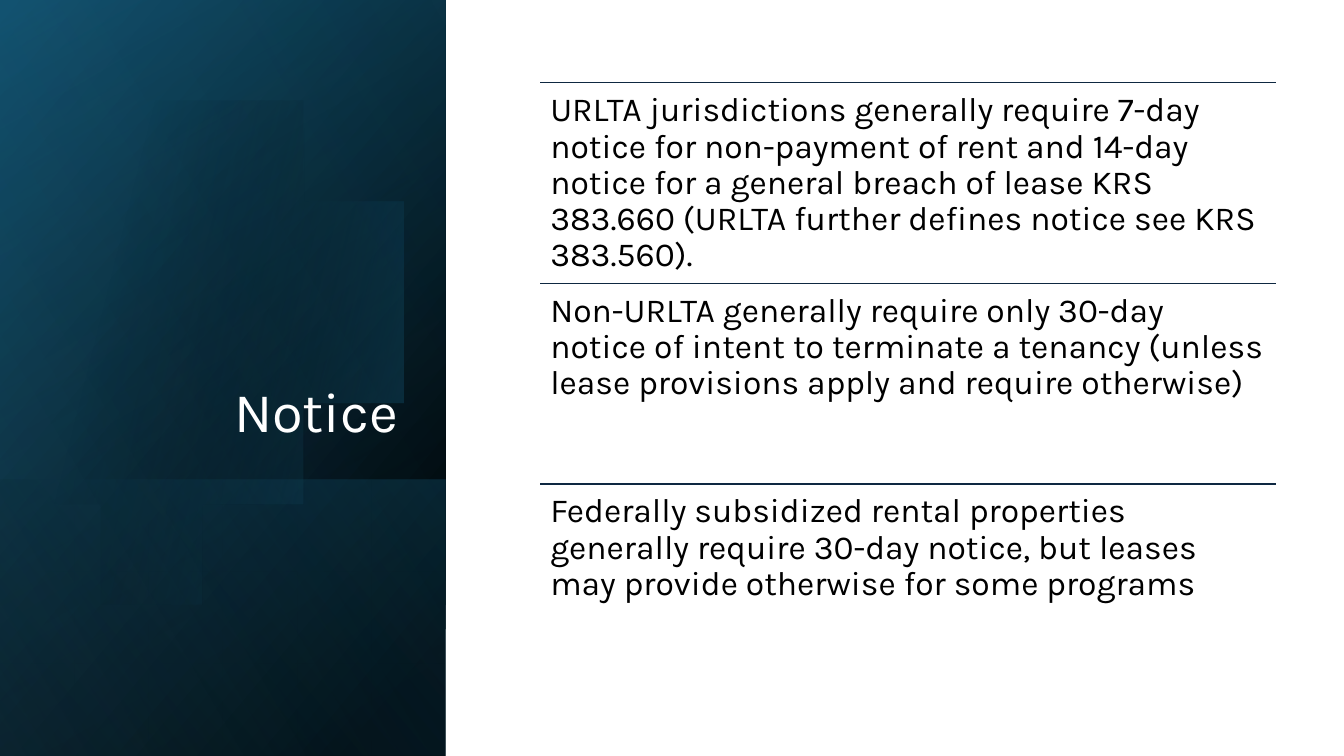
from math import acos, cos, radians, sin
from lxml.etree import SubElement as Sub
from pptx import Presentation
from pptx.dml.color import RGBColor as Rgb
from pptx.enum.shapes import MSO_CONNECTOR as Conn, MSO_SHAPE as Kind
from pptx.enum.text import MSO_ANCHOR as Anchor, MSO_AUTO_SIZE as Fit, PP_ALIGN as Align
from pptx.oxml.ns import qn
from pptx.util import Inches, Pt

TITLE = "Notice"
RULES = [
    "URLTA jurisdictions generally require 7-day notice for non-payment of rent and 14-day notice for a general breach of lease KRS 383.660 (URLTA further defines notice see KRS 383.560).",
    "Non-URLTA generally require only 30-day notice of intent to terminate a tenancy (unless lease provisions apply and require otherwise)",
    "Federally subsidized rental properties generally require 30-day notice, but leases may provide otherwise for some programs",
]
HEX = {"black": "000000", "white": "FFFFFF", "teal": "104862",
       "blue": "156082", "sky": "46B1E1", "navy": "0E2841"}
FONT = "Karla"
WIDE, HIGH = 13.33, 7.5
PANEL = 4.42
BASE = [(8, "black", 100), (100, "teal", 100)]
GLOW = [(0, "black", 0), (99, "blue", 46)]
FOOT = [(2, "blue", 29), (100, "black", 30)]
DISC = [(29, "black", 0), (100, "blue", 43)]
SHEEN = [(0, "black", 0), (99, "sky", 11)]
MID_X, MID_Y, RADIUS = 1.43, 3.38, 2.29
LEFT, TOP, SPAN, STEP = 5.36, 0.82, 7.3, 1.99


def paint(shape, stops, angle):
    shape.shadow.inherit = False
    shape.line.fill.background()
    shape.fill.gradient()
    shape.fill.gradient_angle = 0
    grad = shape.element.spPr.find(qn("a:gradFill"))
    grad.find(qn("a:lin")).set("ang", str(angle * 60000))
    grad.find(qn("a:lin")).set("scaled", "0")
    row = grad.find(qn("a:gsLst"))
    for old in list(row):
        row.remove(old)
    for pos, name, alpha in stops:
        stop = Sub(row, qn("a:gs"), pos=str(pos * 1000))
        tint = Sub(stop, qn("a:srgbClr"), val=HEX[name])
        Sub(tint, qn("a:alpha"), val=str(alpha * 1000))


def band(top, stops, angle):
    rect = shapes.add_shape(Kind.RECTANGLE, 0, Inches(top), Inches(PANEL), Inches(HIGH - top))
    paint(rect, stops, angle)


def disc():
    edge = acos(-MID_X / RADIUS)
    turns = [edge * (i / 60 - 1) for i in range(121)]
    dots = [(MID_X + RADIUS * cos(t), MID_Y + RADIUS * sin(t)) for t in turns]
    pen = shapes.build_freeform(*dots[0], scale=Inches(1))
    pen.add_line_segments(dots[1:], close=True)
    paint(pen.convert_to_shape(), DISC, 14)


def write(box, text, size=24, color="black", align=Align.LEFT, anchor=Anchor.TOP, after=8.4):
    frame = box.text_frame
    frame.word_wrap = True
    frame.auto_size = Fit.NONE
    frame.vertical_anchor = anchor
    frame.margin_left = frame.margin_right = Inches(0.1)
    frame.margin_top = frame.margin_bottom = Inches(0.1 if after else 0.05)
    para = frame.paragraphs[0]
    para.alignment = align
    para.line_spacing = 0.9
    para.space_after = Pt(after)
    run = para.add_run()
    run.text = text
    run.font.name = FONT
    run.font.size = Pt(size)
    run.font.color.rgb = Rgb.from_string(HEX[color])


deck = Presentation()
deck.slide_width, deck.slide_height = Inches(WIDE), Inches(HIGH)
slide = deck.slides.add_slide(deck.slide_layouts[5])
shapes = slide.shapes

band(0, BASE, 220)
band(0, GLOW, 240)
band(4.76, FOOT, 140)
disc()
band(0, SHEEN, 150)

title = shapes.title
title.left, title.top = Inches(0.64), Inches(1.84)
title.width, title.height = Inches(3.41), Inches(2.62)
title.element.getparent().append(title.element)
write(title, TITLE, size=40, color="white", align=Align.RIGHT, anchor=Anchor.BOTTOM, after=0)

for i, text in enumerate(RULES):
    y = Inches(TOP + i * STEP)
    line = shapes.add_connector(Conn.STRAIGHT, Inches(LEFT), y, Inches(LEFT + SPAN), y)
    line.line.color.rgb = Rgb.from_string(HEX["navy"])
    line.line.width = Pt(1)
    Sub(line.element.spPr, qn("a:effectLst"))
    write(shapes.add_textbox(Inches(LEFT), y, Inches(SPAN), Inches(STEP)), text)

deck.save("out.pptx")
